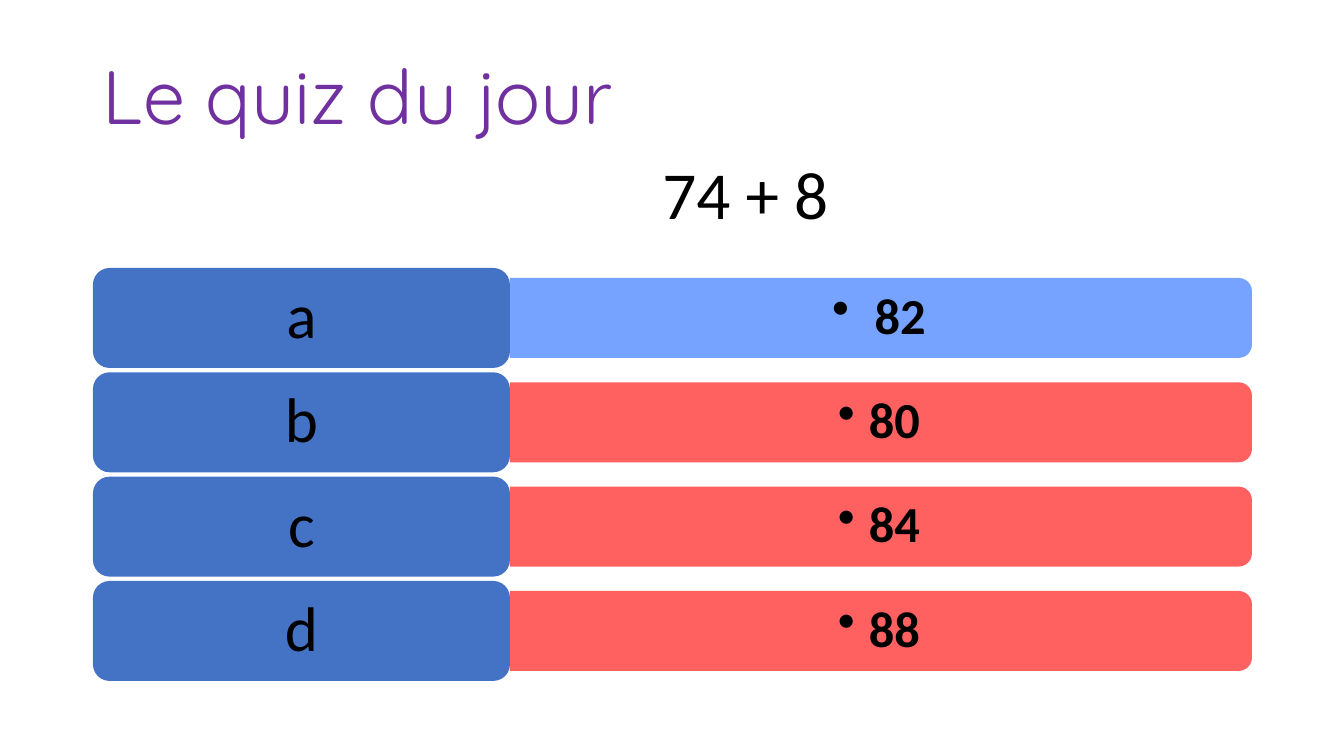
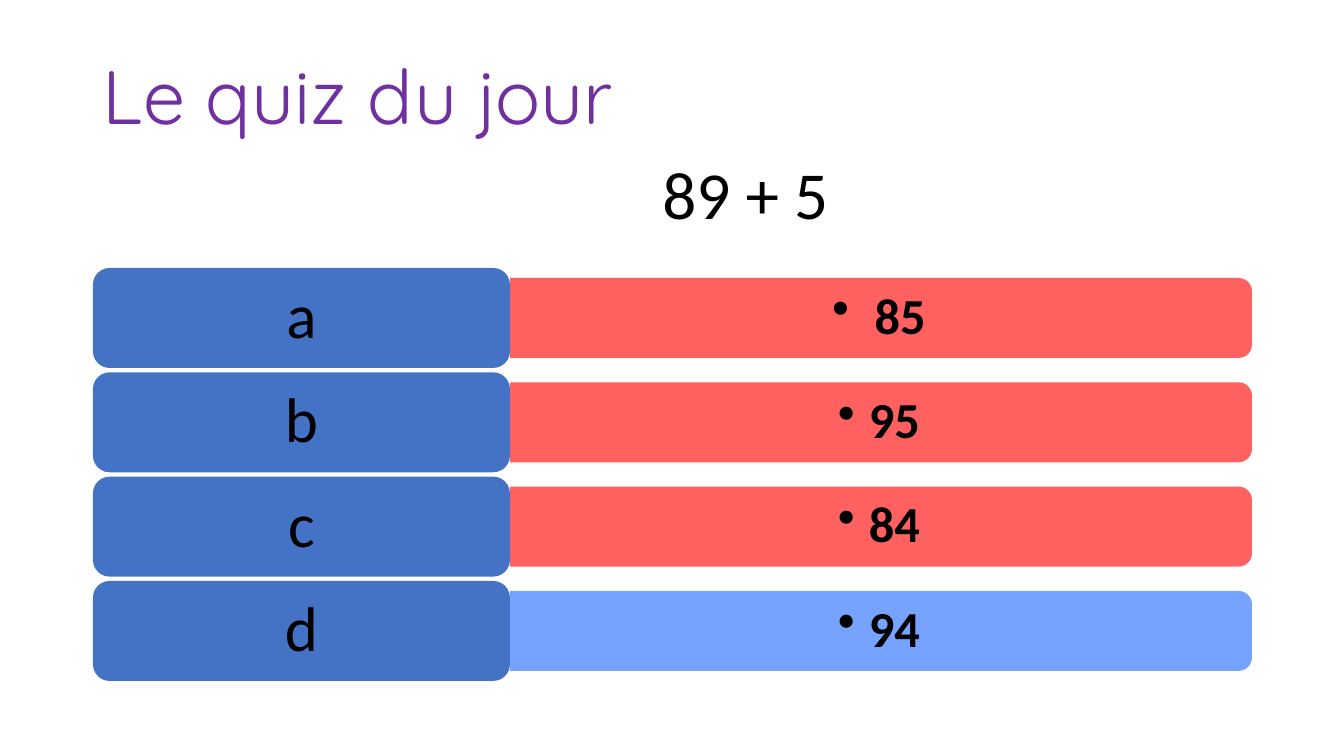
import pptx
import pptx.util
import pptx.dml.color
import pptx.enum.shapes
import pptx.enum.text
import pptx.oxml.ns
import lxml.etree

# Content: question, answers in order, index of the right answer
TITLE = "Le quiz du jour"
LETTERS = "abcd"
QUIZZES = [
    ("74 + 8", [" 82", "80", "84", "88"], 0),
    ("89 + 5", [" 85", "95", "84", "94"], 3),
]

# Shared style
PURPLE, BLACK, LABEL = "7030A0", "000000", "4472C4"
RIGHT, WRONG = "6699FF", "FF5050"
BAR_OPACITY = 90
TITLE_FONT, BODY_FONT = "Quicksand", "Calibri"

# Layout in px
SLIDE_W, SLIDE_H = 1344, 756
TITLE_BOX = (93, 27, 1159, 146)
QUESTION_BOX = (617, 147, 257, 92)
LEFT, SPLIT, RIGHT_EDGE = 93, 510, 1252
TOP, BOTTOM = 268, 681
LABEL_H, BAR_H = 100, 80
PITCH = (BOTTOM - TOP - LABEL_H) / (len(LETTERS) - 1)
BULLET_INDENT = 31

SHAPE = pptx.enum.shapes.MSO_SHAPE
ALIGN = pptx.enum.text.PP_ALIGN
ANCHOR = pptx.enum.text.MSO_ANCHOR
qn = pptx.oxml.ns.qn


def px(n):
    return pptx.util.Emu(round(n * 914400 / 100.8))


def rgb(value):
    return pptx.dml.color.RGBColor.from_string(value)


def write(sp, text, size, font=BODY_FONT, color=BLACK, bold=False,
          align=ALIGN.CENTER, anchor=ANCHOR.MIDDLE, spacing=0.9, inset=(10, 5)):
    tf = sp.text_frame
    tf.text = text
    tf.word_wrap = True
    tf.auto_size = pptx.enum.text.MSO_AUTO_SIZE.NONE
    tf.vertical_anchor = anchor
    tf.margin_left = tf.margin_right = px(inset[0])
    tf.margin_top = tf.margin_bottom = px(inset[1])
    p = tf.paragraphs[0]
    p.alignment, p.line_spacing = align, spacing
    f = p.runs[0].font
    f.name, f.size, f.bold = font, pptx.util.Pt(size), bold
    f.color.rgb = rgb(color)
    return p


def add_box(slide, kind, box, color):
    sp = slide.shapes.add_shape(kind, *map(px, box))
    sp.shadow.inherit = False
    sp.fill.solid()
    sp.fill.fore_color.rgb = rgb(color)
    sp.line.fill.background()
    return sp


def add_bullet(p):
    pPr = p._p.get_or_add_pPr()
    pPr.set("marL", str(px(BULLET_INDENT)))
    pPr.set("indent", str(-px(BULLET_INDENT)))
    lxml.etree.SubElement(pPr, qn("a:buChar")).set("char", "•")


def add_answer_bar(slide, center_y, text, color):
    width = RIGHT_EDGE - SPLIT
    center_x = SPLIT + width / 2
    # Turned a quarter so that the rounded corners face right
    bar = add_box(slide, SHAPE.ROUND_2_SAME_RECTANGLE,
                  (center_x - BAR_H / 2, center_y - width / 2, BAR_H, width), color)
    bar.rotation = 90
    fill_color = bar._element.spPr.find(".//" + qn("a:srgbClr"))
    lxml.etree.SubElement(fill_color, qn("a:alpha")).set("val", str(BAR_OPACITY * 1000))
    # Upright text over the bar
    answer = slide.shapes.add_textbox(
        px(SPLIT), px(center_y - BAR_H / 2), px(width - 4), px(BAR_H))
    add_bullet(write(answer, text, 36, bold=True, inset=(15, 7)))


def add_quiz(prs, question, answers, right):
    slide = prs.slides.add_slide(prs.slide_layouts[5])
    title = slide.shapes.title
    title.left, title.top, title.width, title.height = map(px, TITLE_BOX)
    write(title, TITLE, 54, TITLE_FONT, PURPLE, align=ALIGN.LEFT)

    # Answer rows
    for i, (letter, answer) in enumerate(zip(LETTERS, answers)):
        y = TOP + i * PITCH
        add_answer_bar(slide, y + LABEL_H / 2, answer, RIGHT if i == right else WRONG)
        label = add_box(slide, SHAPE.ROUNDED_RECTANGLE,
                        (LEFT, y, SPLIT - LEFT, LABEL_H), LABEL)
        write(label, letter, 45, inset=(24, 14))

    # Question
    box = slide.shapes.add_textbox(*map(px, QUESTION_BOX))
    write(box, question, 48, anchor=ANCHOR.TOP, spacing=1.0)


def main():
    prs = pptx.Presentation()
    prs.slide_width, prs.slide_height = px(SLIDE_W), px(SLIDE_H)
    for quiz in QUIZZES:
        add_quiz(prs, *quiz)
    prs.save("out.pptx")


if __name__ == "__main__":
    main()
